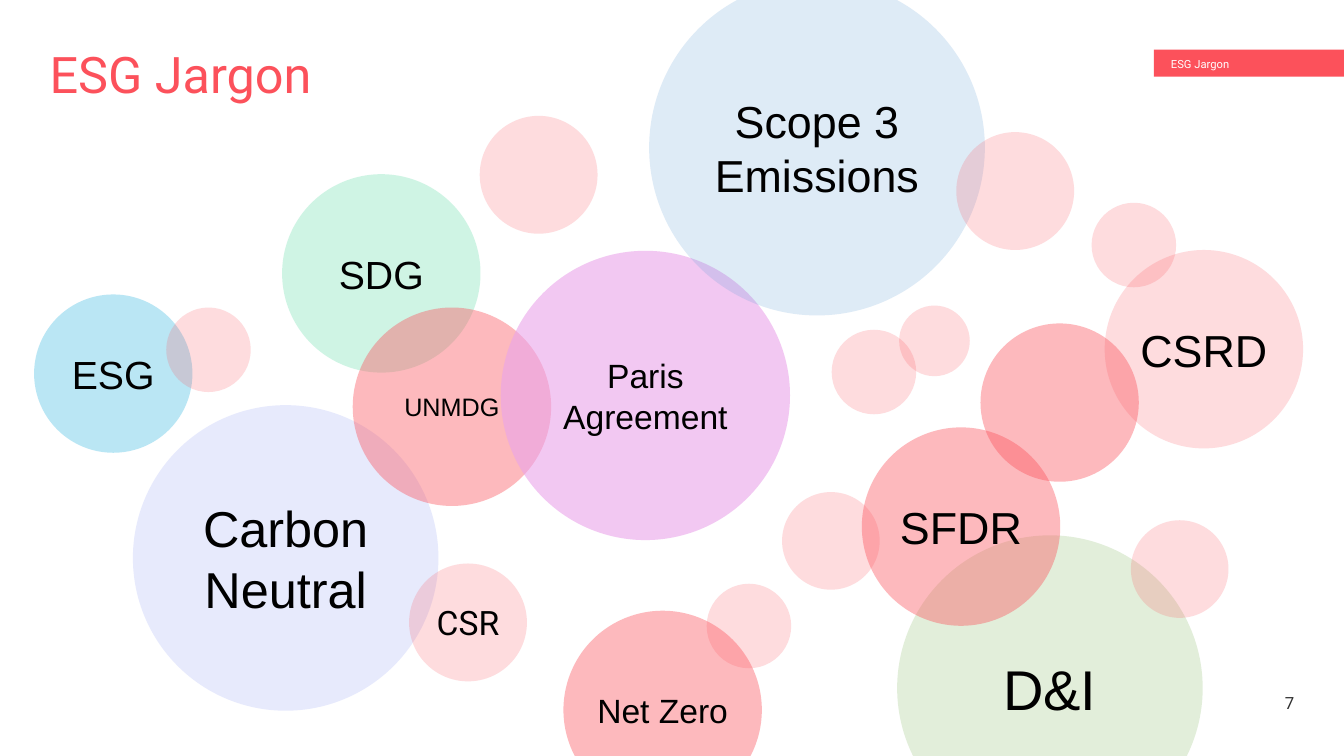
from dataclasses import dataclass
from typing import Optional

from lxml.etree import SubElement
from pptx import Presentation
from pptx.dml.color import RGBColor
from pptx.enum.shapes import MSO_SHAPE
from pptx.enum.text import MSO_ANCHOR, PP_ALIGN
from pptx.oxml.ns import qn
from pptx.shapes.autoshape import Shape
from pptx.slide import Slide
from pptx.util import Cm, Pt


@dataclass(frozen=True)
class Theme:
    sans: str = "Arial"
    accent_font: str = "Roboto"
    coral: str = "FC515B"
    periwinkle: str = "8996F4"
    cyan: str = "53C2E5"
    mint: str = "88E5BD"
    orchid: str = "EAA4EA"
    blue: str = "5B9BD5"
    green: str = "70AD47"
    black: str = "000000"
    grey: str = "303030"
    white: str = "FFFFFF"
    tag_size: float = 8
    number_size: float = 12
    small: float = 18
    medium: float = 24
    large: float = 28
    larger: float = 32
    title_size: float = 36
    largest: float = 40


THEME = Theme()

# Bubble diameters in cm
DOT, TINY, MINOR, MODEST = 1.78, 2.13, 2.46, 2.97
MIDDLE, MAJOR, BIG, HUGE, GIANT = 3.99, 5.0, 7.29, 7.7, 8.46


@dataclass(frozen=True)
class TextStyle:
    size: float
    font: str = THEME.sans
    colour: str = THEME.black
    align: PP_ALIGN = PP_ALIGN.CENTER
    anchor: MSO_ANCHOR = MSO_ANCHOR.MIDDLE
    spacing: float = 1.0
    inset: float = 0


@dataclass(frozen=True)
class Bubble:
    left: float
    top: float
    diameter: float
    colour: str = THEME.coral
    opacity: int = 20
    term: str = ""
    style: Optional[TextStyle] = None


SMALL, MEDIUM, LARGE = (TextStyle(s) for s in (THEME.small, THEME.medium, THEME.large))
LARGER, CARBON, LARGEST = (TextStyle(s) for s in (THEME.larger, THEME.title_size, THEME.largest))
CSR = TextStyle(THEME.medium, THEME.accent_font)
TITLE = TextStyle(THEME.title_size, THEME.accent_font, THEME.coral,
                  PP_ALIGN.LEFT, MSO_ANCHOR.TOP, 0.9)
PAGE_NUMBER = TextStyle(THEME.number_size, THEME.accent_font, THEME.grey,
                        PP_ALIGN.RIGHT, MSO_ANCHOR.BOTTOM, 0.9)
SECTION_TAG = TextStyle(THEME.tag_size, THEME.accent_font, THEME.white,
                        PP_ALIGN.LEFT, spacing=1.2, inset=0.43)

# Back to front
BUBBLES = [
    Bubble(3.35, 10.21, HUGE, THEME.periwinkle, 20, "Carbon Neutral", CARBON),
    Bubble(0.86, 7.42, MIDDLE, THEME.cyan, 40, "ESG", LARGE),
    Bubble(4.19, 7.75, TINY),
    Bubble(10.31, 14.2, MODEST, term="CSR", style=CSR),
    Bubble(7.11, 4.39, MAJOR, THEME.mint, 40, "SDG", LARGE),
    Bubble(8.89, 7.75, MAJOR, THEME.coral, 40, "UNMDG", SMALL),
    Bubble(12.09, 2.92, MODEST),
    Bubble(12.62, 6.32, BIG, THEME.orchid, 60, "Paris Agreement", MEDIUM),
    Bubble(16.36, -0.51, GIANT, THEME.blue, 20, "Scope 3 Emissions", LARGER),
    Bubble(24.1, 3.33, MODEST),
    Bubble(20.96, 8.31, TINY),
    Bubble(22.66, 7.7, DOT),
    Bubble(19.71, 12.4, MINOR),
    Bubble(17.81, 14.71, TINY),
    Bubble(14.2, 15.39, MAJOR, THEME.coral, 40, "Net Zero", MEDIUM),
    Bubble(22.61, 13.49, HUGE, THEME.green, 20, "D&I", LARGEST),
    Bubble(21.72, 10.77, MAJOR, THEME.coral, 40, "SFDR", LARGER),
    Bubble(24.71, 8.15, MIDDLE, opacity=40),
    Bubble(27.51, 5.11, TINY),
    Bubble(27.84, 6.3, MAJOR, term="CSRD", style=LARGER),
    Bubble(28.5, 13.11, MINOR),
]


def write(shape: Shape, text: str, style: TextStyle) -> None:
    frame = shape.text_frame
    frame_format = {
        "word_wrap": True,
        "vertical_anchor": style.anchor,
        "margin_left": Cm(style.inset),
        "margin_top": 0,
        "margin_right": 0,
        "margin_bottom": 0,
    }
    for name, value in frame_format.items():
        setattr(frame, name, value)
    paragraph = frame.paragraphs[0]
    paragraph.alignment = style.align
    paragraph.line_spacing = style.spacing
    run = paragraph.add_run()
    run.text = text
    for name, value in {"name": style.font, "size": Pt(style.size)}.items():
        setattr(run.font, name, value)
    run.font.color.rgb = RGBColor.from_string(style.colour)


def add_filled(slide: Slide, kind: MSO_SHAPE, left: float, top: float,
               width: float, height: float, colour: str, opacity: int = 100) -> Shape:
    """Add a borderless shape; opacity is a percentage."""
    shape = slide.shapes.add_shape(kind, Cm(left), Cm(top), Cm(width), Cm(height))
    shape.shadow.inherit = False
    shape.line.fill.background()
    shape.fill.solid()
    shape.fill.fore_color.rgb = RGBColor.from_string(colour)
    if opacity < 100:
        fill_colour = shape.fill._xPr.find(qn("a:solidFill"))[0]
        SubElement(fill_colour, qn("a:alpha"), val=str(opacity * 1000))
    return shape


def add_text(slide: Slide, left: float, top: float, width: float, height: float,
             text: str, style: TextStyle) -> None:
    box = slide.shapes.add_textbox(Cm(left), Cm(top), Cm(width), Cm(height))
    write(box, text, style)


def add_bubble(slide: Slide, bubble: Bubble) -> None:
    circle = add_filled(slide, MSO_SHAPE.OVAL, bubble.left, bubble.top,
                        bubble.diameter, bubble.diameter, bubble.colour, bubble.opacity)
    if bubble.style:
        write(circle, bubble.term, bubble.style)


def main() -> None:
    presentation = Presentation()
    presentation.slide_width = Cm(33.87)
    presentation.slide_height = Cm(19.05)
    slide = presentation.slides.add_slide(presentation.slide_layouts[6])

    add_text(slide, 1.25, 1.25, 24.3, 1.1, "ESG Jargon", TITLE)
    add_text(slide, 31.72, 17.27, 0.9, 0.69, "7", PAGE_NUMBER)
    section_tag = add_filled(slide, MSO_SHAPE.RECTANGLE, 29.08, 1.25, 4.79, 0.68, THEME.coral)
    write(section_tag, "ESG Jargon", SECTION_TAG)
    for bubble in BUBBLES:
        add_bubble(slide, bubble)

    presentation.save("out.pptx")


if __name__ == "__main__":
    main()
